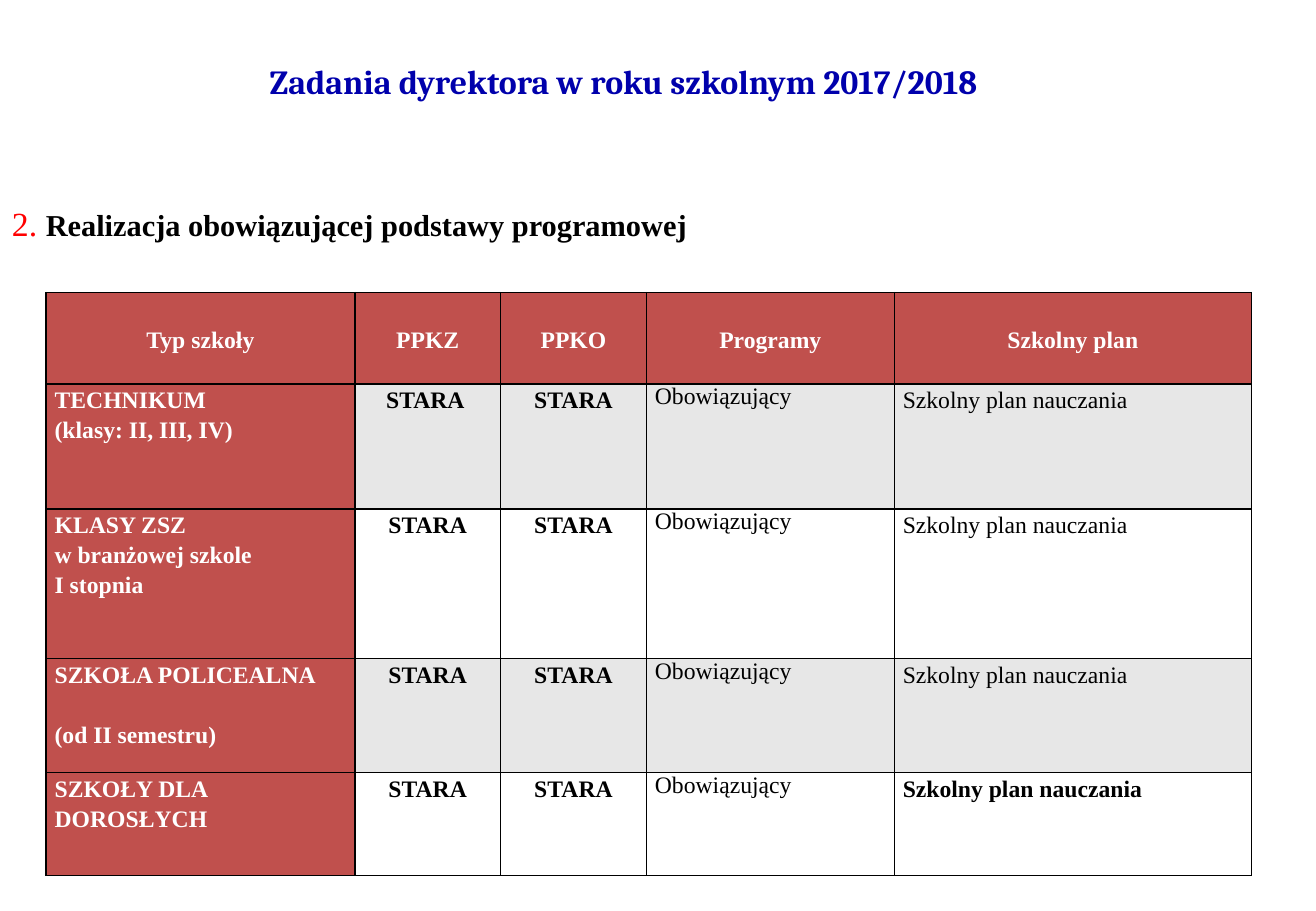
from pptx import Presentation
from pptx.dml.color import RGBColor
from pptx.enum.shapes import MSO_SHAPE
from pptx.enum.text import MSO_ANCHOR, PP_ALIGN
from pptx.oxml import parse_xml
from pptx.oxml.ns import nsdecls
from pptx.util import Pt

LEFT, MID, JUST = PP_ALIGN.LEFT, PP_ALIGN.CENTER, PP_ALIGN.JUSTIFY
TOP, MIDDLE = MSO_ANCHOR.TOP, MSO_ANCHOR.MIDDLE
RECT = MSO_SHAPE.RECTANGLE
PX = 9144  # 100 px to the inch
SERIF = "Times New Roman"
COLORS = {"title": "0000AC", "number": "FF0000", "text": "000000", "brick": "C0504D",
          "white": "FFFFFF", "grey": "E7E7E7", "line": "000000"}

TITLE = "Zadania dyrektora w roku szkolnym 2017/2018"
NUMBER, TASK = "2. ", "Realizacja obowiązującej podstawy programowej"
HEAD = ["Typ szkoły", "PPKZ", "PPKO", "Programy", "Szkolny plan"]
# school lines, PPKZ, gap before the last line in points, plan in bold
SCHOOLS = [
    (["TECHNIKUM", "(klasy: II, III, IV)"], "STARA ", 0, False),
    (["KLASY ZSZ", "w branżowej szkole", "I stopnia"], "STARA", 0, False),
    (["SZKOŁA POLICEALNA", "(od II semestru)"], "STARA", 18, False),
    (["SZKOŁY DLA DOROSŁYCH"], "STARA", 0, True),
]
PPKO, PROGRAM, PLAN = "STARA", "Obowiązujący", "Szkolny plan nauczania"
COLS = [254, 120, 120, 204, 294]
ROWS = [75, 103, 123, 94, 85]
TITLE_BOX = (212, 16, 855, 102)
TASK_BOX = (0, 162, 1071, 44)
GRID = (38, 241, sum(COLS), sum(ROWS))


def px(*vals):
    return [v * PX for v in vals]


def paint(item, color):
    item.fill.solid()
    item.fill.fore_color.rgb = RGBColor.from_string(COLORS[color])


def write(par, text, size, color, bold=False, name=SERIF):
    run = par.add_run()
    run.text = text
    look = {"size": Pt(size), "bold": bold, "name": name}
    for key, val in look.items():
        setattr(run.font, key, val)
    run.font.color.rgb = RGBColor.from_string(COLORS[color])


def start(shape, anchor):
    """Set up the text of a shape and return its first paragraph."""
    frame = shape.text_frame
    frame.word_wrap = True
    frame.vertical_anchor = anchor
    par = frame.paragraphs[0]
    par.alignment = LEFT
    return par


def add_task(slide):
    bar = slide.shapes.add_shape(RECT, *px(*TASK_BOX))
    bar.shadow.inherit = False
    bar.line.fill.background()
    paint(bar, "white")
    par = start(bar, TOP)
    write(par, NUMBER, 20, "number")
    write(par, TASK, 18, "text", True)


def frame_cell(cell):
    """Draw the four borders of a cell."""
    props = cell._tc.get_or_add_tcPr()
    for side in ("lnL", "lnR", "lnT", "lnB"):
        props.append(parse_xml(
            f'<a:{side} {nsdecls("a")} w="12700"><a:solidFill>'
            f'<a:srgbClr val="{COLORS["line"]}"/></a:solidFill></a:{side}>'))


def fill_cell(cell, lines, fill, color, bold, align=LEFT, anchor=TOP, space=1.15, gap=0):
    frame_cell(cell)
    paint(cell, fill)
    look = {"margin_left": 7 * PX, "margin_right": 7 * PX, "margin_top": 0,
            "margin_bottom": 0, "vertical_anchor": anchor}
    for key, val in look.items():
        setattr(cell, key, val)
    frame = cell.text_frame
    for i, line in enumerate(lines):
        par = frame.add_paragraph() if i else frame.paragraphs[0]
        par.alignment = align
        par.line_spacing = space
        if gap and i == len(lines) - 1:
            par.space_before = Pt(gap)
        write(par, line, 14, color, bold)


def add_grid(slide):
    table = slide.shapes.add_table(len(ROWS), len(COLS), *px(*GRID)).table
    for col, wide in zip(table.columns, COLS):
        col.width = wide * PX
    for row, high in zip(table.rows, ROWS):
        row.height = high * PX
    for c, text in enumerate(HEAD):
        fill_cell(table.cell(0, c), [text], "brick", "white", True, MID, MIDDLE)
    for r, (school, ppkz, gap, strong) in enumerate(SCHOOLS, 1):
        band = "grey" if r % 2 else "white"
        fill_cell(table.cell(r, 0), school, "brick", "white", True, gap=gap)
        for c, base in enumerate((ppkz, PPKO), 1):
            fill_cell(table.cell(r, c), [base], band, "text", True, MID)
        fill_cell(table.cell(r, 3), [PROGRAM], band, "text", False, JUST, space=1.0)
        fill_cell(table.cell(r, 4), [PLAN], band, "text", strong)


def main():
    deck = Presentation()
    deck.slide_width, deck.slide_height = px(1083, 750)
    slide = deck.slides.add_slide(deck.slide_layouts[6])
    head = start(slide.shapes.add_textbox(*px(*TITLE_BOX)), MIDDLE)
    write(head, TITLE, 20, "title", True, "Cambria")
    add_task(slide)
    add_grid(slide)
    deck.save("out.pptx")


if __name__ == "__main__":
    main()
